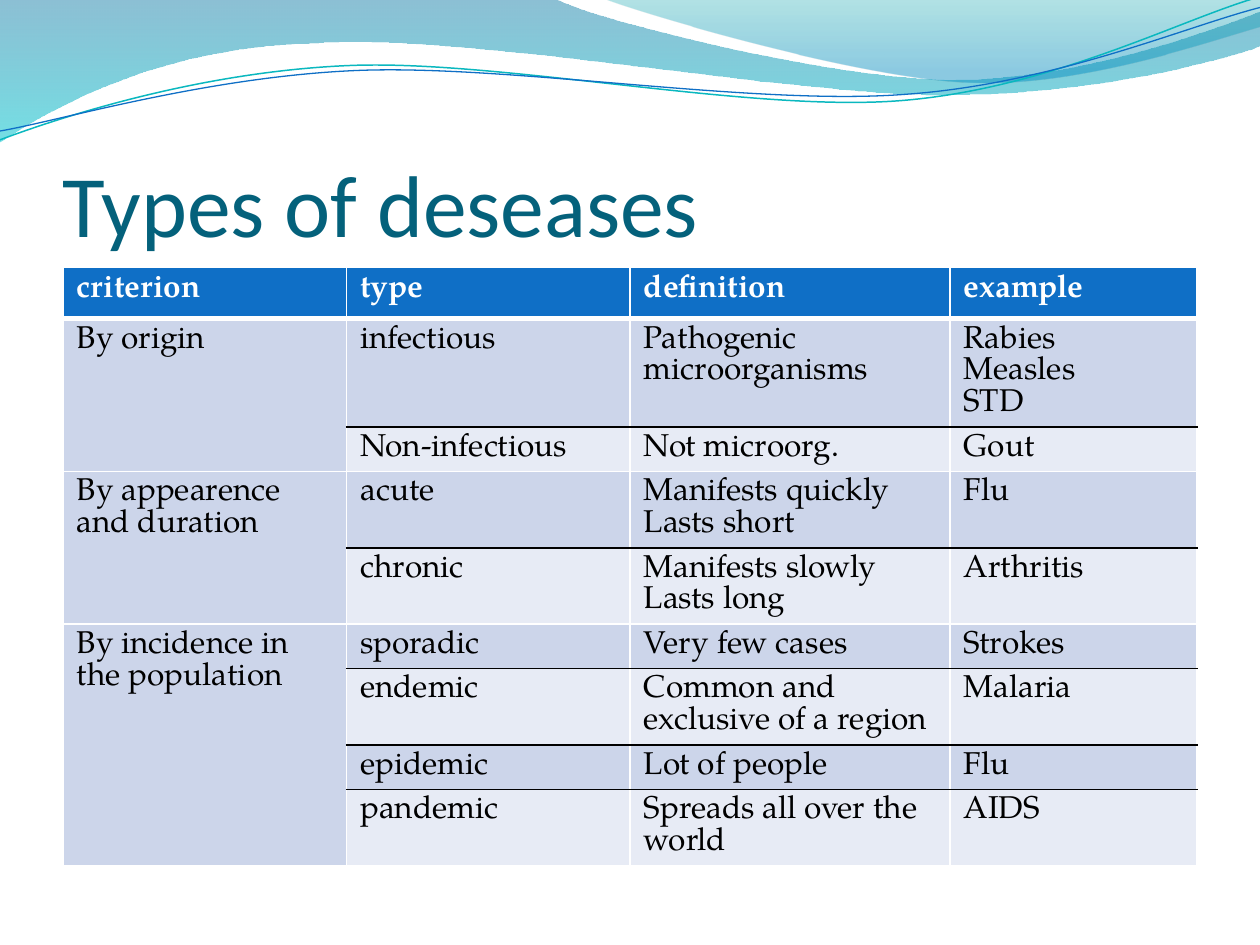
from math import cos, radians, sin

from lxml.etree import SubElement
from pptx import Presentation
from pptx.dml.color import RGBColor
from pptx.enum.text import MSO_ANCHOR
from pptx.oxml.ns import qn
from pptx.util import Inches, Pt

WHITE = RGBColor(0xFF, 0xFF, 0xFF)
BLACK = RGBColor(0, 0, 0)
BLUE = RGBColor(0x0F, 0x6F, 0xC6)
TEAL = RGBColor(0x0A, 0xB8, 0xBF)
TITLE_COLOR = RGBColor(0x04, 0x61, 0x7B)
BAND_DARK = RGBColor(0xCC, 0xD5, 0xEA)
BAND_LIGHT = RGBColor(0xE7, 0xEB, 0xF5)
TITLE_FONT, BODY_FONT = "Calibri", "TeX Gyre Pagella"

TITLE = "Types of deseases"
HEADER = ("criterion", "type", "definition", "example")
GROUPS = [
    ("By origin", [
        ("infectious", "Pathogenic microorganisms", "Rabies\nMeasles\nSTD"),
        ("Non-infectious", "Not microorg.", "Gout"),
    ]),
    ("By appearence and duration", [
        ("acute", "Manifests quickly\nLasts short", "Flu"),
        ("chronic", "Manifests slowly\nLasts long", "Arthritis"),
    ]),
    ("By incidence in the population", [
        ("sporadic", "Very few cases", "Strokes"),
        ("endemic", "Common and exclusive of a region", "Malaria"),
        ("epidemic", "Lot of people", "Flu"),
        ("pandemic", "Spreads all over the world", "AIDS"),
    ]),
]
COLUMN_WIDTHS = (2.25, 2.25, 2.54, 1.96)
HEADER_HEIGHT = 0.41
LINES_PER_ROW = (3, 1, 2, 2, 1, 2, 1, 2)
LINE_HEIGHT, CELL_PADDING = 0.25, 0.1
LINE_SPACING = Pt(18.2)

# A segment of two numbers is a straight line, one of six a Bezier curve.
# Gradient stops run downwards: position, colour, opacity in percent.
WAVES = [
    ([(0, 0), (4.4, -0.01), (4.76, 0.17, 6.64, 0.63, 7.58, 0.63),
      (8.53, 0.63, 9.58, 0.26, 10, 0.09), (10.01, 0.36),
      (9.83, 0.44, 8.7, 0.76, 7.46, 0.75), (6.22, 0.75, 3.82, 0.28, 2.57, 0.34),
      (1.29, 0.36, 0.46, 0.83, -0.01, 1.13)],
     [(0, RGBColor(0, 0x74, 0xA1), 45), (1, RGBColor(0, 0xC6, 0xCF), 55)]),
    ([(4.79, -0.01), (5.09, 0.11, 6.82, 0.62, 7.69, 0.65),
      (8.56, 0.69, 9.61, 0.32, 10, 0.21), (10, 0)],
     [(0, RGBColor(0, 0xA1, 0xA9), 30), (0.8, RGBColor(0, 0x8B, 0xBF), 45)]),
]
SWOOSHES = [
    ([(0, 1.11), (0.48, 0.93, 1.58, 0.57, 2.77, 0.52),
      (3.95, 0.47, 5.93, 0.89, 7.13, 0.8), (8.33, 0.71, 9.38, 0.15, 9.98, -0.02)],
     (4.99, 0.57), TEAL, 0.85),
    ([(0, 1.04), (0.47, 0.96, 1.64, 0.61, 2.83, 0.56),
      (4.03, 0.51, 5.97, 0.84, 7.17, 0.75), (8.36, 0.67, 9.41, 0.21, 10, 0.06)],
     (5, 0.59), BLUE, 0.75),
]
SWOOSH_TILT = 2.7


def turn(segments, center, degrees):
    """Rotate every point of the segments clockwise about the center."""
    c, s = cos(radians(degrees)), sin(radians(degrees))
    cx, cy = center
    turned = []
    for segment in segments:
        numbers = []
        for x, y in zip(segment[::2], segment[1::2]):
            numbers += [cx + (x - cx) * c - (y - cy) * s,
                        cy + (x - cx) * s + (y - cy) * c]
        turned.append(numbers)
    return turned


def add_outline(page, segments, close):
    """Draw a freeform, joining the three points of each curve into a Bezier."""
    corners = [(Inches(x), Inches(y)) for segment in segments
               for x, y in zip(segment[::2], segment[1::2])]
    builder = page.shapes.build_freeform(*corners[0], scale=1.0)
    builder.add_line_segments(corners[1:], close=close)
    shape = builder.convert_to_shape()
    shape.shadow.inherit = False
    lines = iter(list(shape.element.iter(qn("a:lnTo"))))
    for segment in segments[1:]:
        first = next(lines)
        if len(segment) == 6:
            first.tag = qn("a:cubicBezTo")
            for _ in range(2):
                extra = next(lines)
                first.append(extra[0])
                extra.getparent().remove(extra)
    return shape


def add_wave(page, segments, stops):
    shape = add_outline(page, segments, True)
    shape.line.fill.background()
    shape.fill.gradient()
    shape.fill.gradient_angle = 270
    for stop, (position, color, _) in zip(shape.fill.gradient_stops, stops):
        stop.position = position
        stop.color.rgb = color
    for tag, (_, _, opacity) in zip(shape.element.iter(qn("a:srgbClr")), stops):
        SubElement(tag, qn("a:alpha"), val=str(opacity * 1000))


def add_swoosh(page, segments, center, color, width):
    shape = add_outline(page, turn(segments, center, SWOOSH_TILT), False)
    shape.rotation = 360 - SWOOSH_TILT
    shape.fill.background()
    shape.line.color.rgb = color
    shape.line.width = Pt(width)


def style_text(frame, font, size, color, bold=False):
    for para in frame.paragraphs:
        for span in para.runs:
            span.font.name = font
            span.font.size = Pt(size)
            span.font.bold = bold
            span.font.color.rgb = color


def fill_cell(cell, text, color=BLACK, bold=False):
    cell.text = text
    cell.margin_left = cell.margin_right = Inches(0.11)
    style_text(cell.text_frame, BODY_FONT, 18, color, bold)
    for para in cell.text_frame.paragraphs:
        para.line_spacing = LINE_SPACING


def style_cell(cell, fill, top=WHITE, bottom=WHITE, bottom_width=1):
    properties = cell._tc.get_or_add_tcPr()
    for side, color, width in (("L", WHITE, 1), ("R", WHITE, 1),
                               ("T", top, 1), ("B", bottom, bottom_width)):
        border = SubElement(properties, qn("a:ln" + side), w=str(Pt(width)))
        solid = SubElement(border, qn("a:solidFill"))
        SubElement(solid, qn("a:srgbClr"), val=str(color))
    cell.fill.solid()
    cell.fill.fore_color.rgb = fill


def add_title(page):
    box = page.shapes.add_textbox(Inches(0.5), Inches(0.77), Inches(9), Inches(1.25))
    frame = box.text_frame
    frame.word_wrap = True
    frame.vertical_anchor = MSO_ANCHOR.BOTTOM
    frame.margin_left = frame.margin_right = frame.margin_bottom = 0
    frame.text = TITLE
    style_text(frame, TITLE_FONT, 50, TITLE_COLOR)


def add_disease_table(page):
    heights = [HEADER_HEIGHT] + [n * LINE_HEIGHT + CELL_PADDING for n in LINES_PER_ROW]
    table = page.shapes.add_table(len(heights), len(HEADER), Inches(0.5), Inches(2.12),
                                  Inches(sum(COLUMN_WIDTHS)), Inches(sum(heights))).table
    for column, width in zip(table.columns, COLUMN_WIDTHS):
        column.width = Inches(width)
    for row, height in zip(table.rows, heights):
        row.height = Inches(height)

    for column, text in enumerate(HEADER):
        cell = table.cell(0, column)
        fill_cell(cell, text, WHITE, True)
        style_cell(cell, BLUE, bottom_width=3)

    first = 1
    for criterion, members in GROUPS:
        last = len(members) - 1
        for index, member in enumerate(members):
            band = BAND_LIGHT if index % 2 else BAND_DARK
            side = table.cell(first + index, 0)
            fill_cell(side, "" if index else criterion)
            style_cell(side, BAND_DARK)
            for column, text in enumerate(member, 1):
                cell = table.cell(first + index, column)
                fill_cell(cell, text)
                style_cell(cell, band, BLACK if index else WHITE,
                           BLACK if index < last else WHITE)
        table.cell(first, 0).merge(table.cell(first + last, 0))
        first += len(members)


def main():
    deck = Presentation()
    deck.slide_width, deck.slide_height = Inches(10), Inches(7.5)
    page = deck.slides.add_slide(deck.slide_layouts[6])
    for wave in WAVES:
        add_wave(page, *wave)
    for swoosh in SWOOSHES:
        add_swoosh(page, *swoosh)
    add_title(page)
    add_disease_table(page)
    deck.save("out.pptx")


if __name__ == "__main__":
    main()
